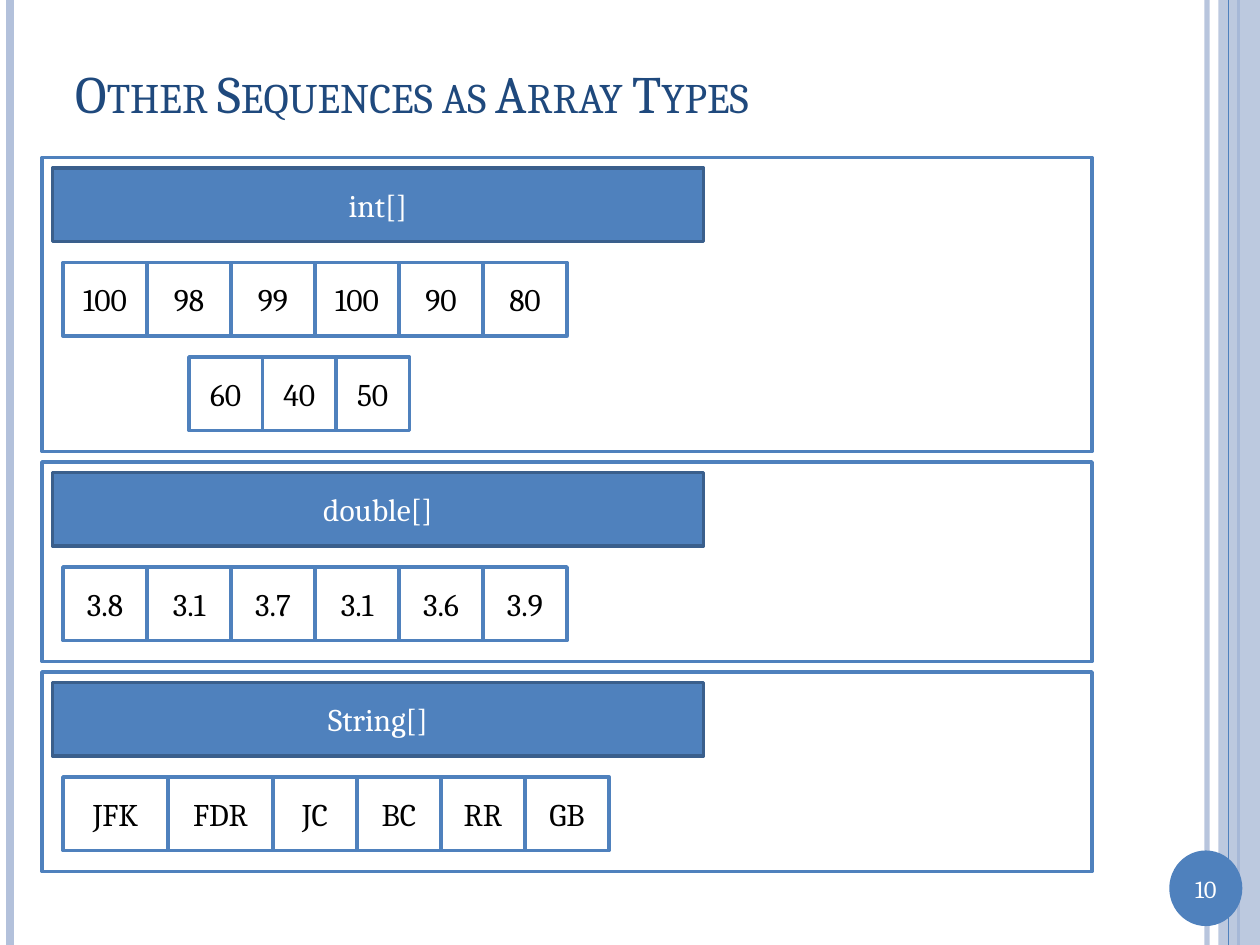
from pptx import Presentation
from pptx.dml.color import RGBColor
from pptx.enum.shapes import MSO_CONNECTOR, MSO_SHAPE
from pptx.enum.text import MSO_ANCHOR, PP_ALIGN
from pptx.oxml.ns import qn
from pptx.util import Inches, Pt
from lxml import etree

RECT, OVAL = MSO_SHAPE.RECTANGLE, MSO_SHAPE.OVAL
LINE = MSO_CONNECTOR.STRAIGHT
MIDDLE = MSO_ANCHOR.MIDDLE
LEFT, CENTER = PP_ALIGN.LEFT, PP_ALIGN.CENTER
BLUE, PALE, DARK, NAVY = "4F81BD", "B3C1DB", "3A5F8C", "1F497D"
WHITE, BLACK = "FFFFFF", "000000"
rgb = RGBColor.from_string

prs = Presentation()
prs.slide_width, prs.slide_height = Inches(10), Inches(7.5)
slide = prs.slides.add_slide(prs.slide_layouts[6])
shapes = slide.shapes


def add_box(x, y, w, h, fill, edge=None, kind=RECT):
    box = shapes.add_shape(kind, Inches(x), Inches(y), Inches(w), Inches(h))
    box.shadow.inherit = False
    box.fill.solid()
    box.fill.fore_color.rgb = rgb(fill)
    if edge:
        box.line.color.rgb = rgb(edge)
        box.line.width = Pt(2)
    else:
        box.line.fill.background()
    return box


def write(shape, text, size, color, align=CENTER):
    frame = shape.text_frame
    frame.word_wrap = True
    frame.vertical_anchor = MIDDLE
    frame.text = text
    para = frame.paragraphs[0]
    para.alignment = align
    font = para.runs[0].font
    font.name, font.size = "Cambria", Pt(size)
    font.color.rgb = rgb(color)


# Side stripes: x, color, width in points, opacity in percent
band = None
for x, color, width, alpha in [(9.58, PALE, 3, 93), (0.08, PALE, 4.5, 100),
                               (9.83, BLUE, 1.5, 100), (9.75, BLUE, 0.75, 100)]:
    if x == 9.75:
        # The wide band lies under the last thin line
        band = add_box(9.67, 0, 0.33, 7.5, PALE)
        tint = band.fill._xPr.find(".//" + qn("a:srgbClr"))
        etree.SubElement(tint, qn("a:alpha"), val="87000")
    line = shapes.add_connector(LINE, Inches(x), 0, Inches(x), Inches(7.5))
    line.line.color.rgb = rgb(color)
    line.line.width = Pt(width)
    props = line._element.spPr
    if alpha < 100:
        tint = props.find(".//" + qn("a:srgbClr"))
        etree.SubElement(tint, qn("a:alpha"), val=str(alpha * 1000))
    etree.SubElement(props, qn("a:effectLst"))

# Page number
add_box(9.28, 6.75, 0.58, 0.6, BLUE, kind=OVAL)
number = shapes.add_textbox(Inches(9.28), Inches(6.88), Inches(0.58), Inches(0.34))
write(number, "10", 14, WHITE)

# Title in small capitals
title = shapes.add_textbox(Inches(0.5), Inches(0.3), Inches(8.67), Inches(0.87))
write(title, "Other Sequences as Array Types", 30, NAVY, LEFT)
run = title.text_frame.paragraphs[0].runs[0]
run._r.get_or_add_rPr().set("cap", "small")

# Panels: name, top, height, rows of (left, cell widths, values)
# The layout sits on a grid of twelfths of an inch
UNIT = 1 / 12
TALL = 7 * UNIT
panels = [
    ("int[]", 15, 28, [(6, [8] * 6, ["100", "98", "99", "100", "90", "80"]),
                       (18, [7] * 3, ["60", "40", "50"])]),
    ("double[]", 44, 19, [(6, [8] * 6, ["3.8", "3.1", "3.7", "3.1", "3.6", "3.9"])]),
    ("String[]", 64, 19, [(6, [10] * 2 + [8] * 4,
                           ["JFK", "FDR", "JC", "BC", "RR", "GB"])]),
]
for name, top, height, rows in panels:
    add_box(4 * UNIT, top * UNIT, 100 * UNIT, height * UNIT, WHITE, BLUE)
    for i, (left, widths, values) in enumerate(rows):
        y = top + 10 + 9 * i
        for width, value in zip(widths, values):
            cell = add_box(left * UNIT, y * UNIT, width * UNIT, TALL, WHITE, BLUE)
            write(cell, value, 18, BLACK)
            left += width
    head = add_box(5 * UNIT, (top + 1) * UNIT, 62 * UNIT, TALL, BLUE, DARK)
    write(head, name, 18, WHITE)

prs.save("out.pptx")
